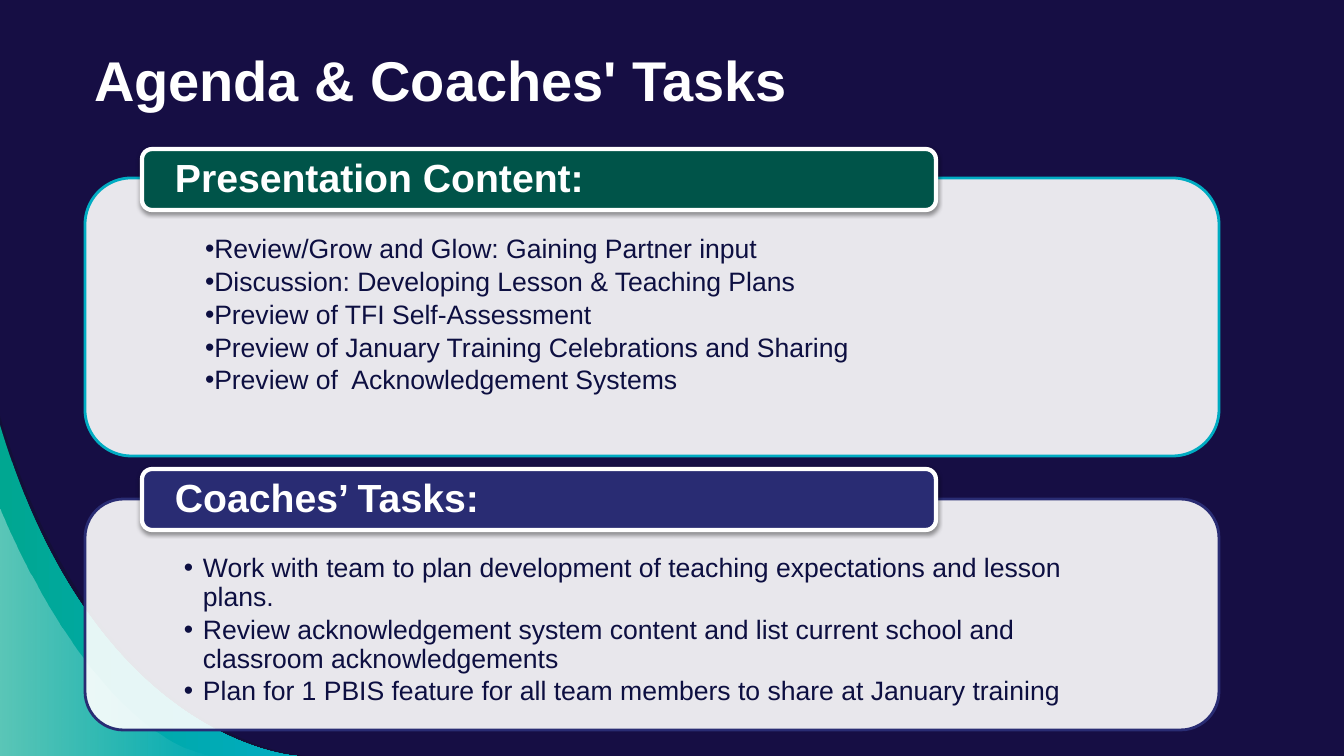
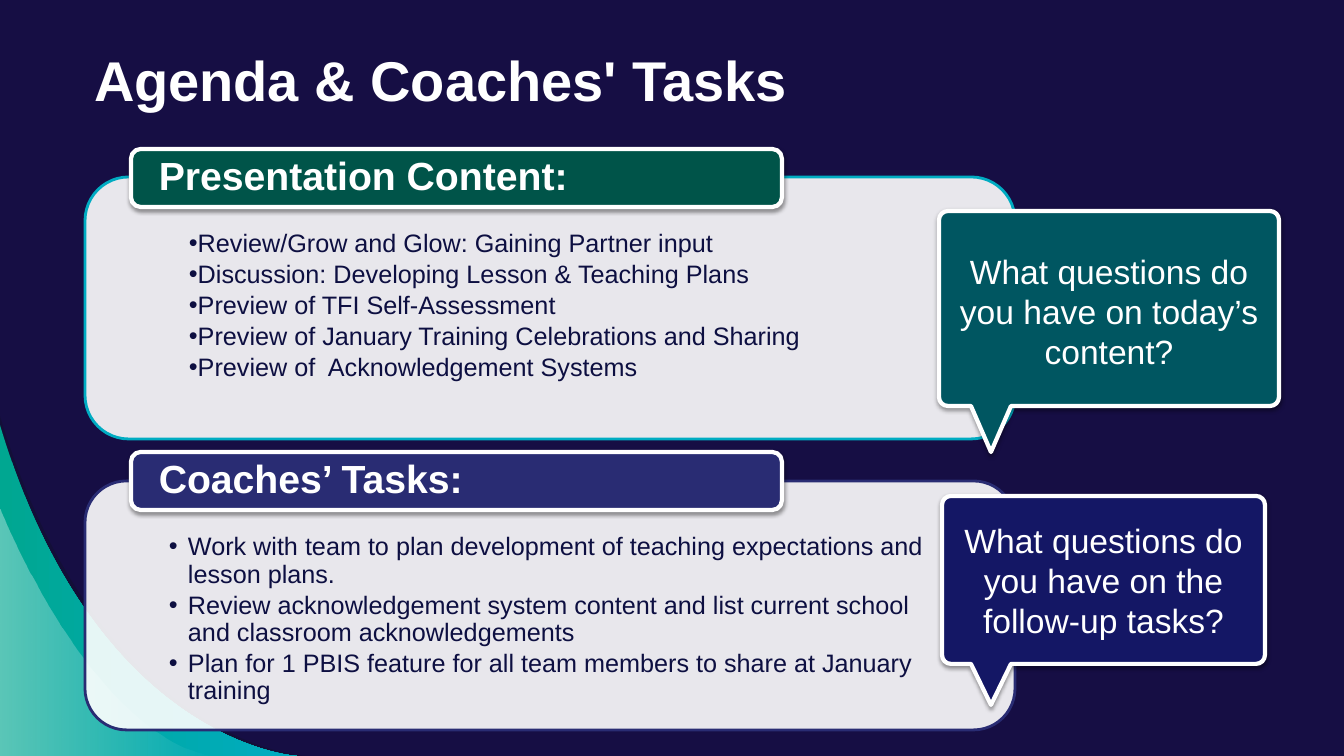
from dataclasses import dataclass

from lxml.etree import SubElement
from pptx import Presentation
from pptx.dml.color import RGBColor
from pptx.enum.shapes import MSO_SHAPE as Preset
from pptx.enum.text import MSO_ANCHOR as Anchor, MSO_AUTO_SIZE as AutoSize, PP_ALIGN as Align
from pptx.oxml.ns import qn
from pptx.util import Emu, Pt

EMU_PER_PX = 914400 / 100.8
FONT = "Arial"
TITLE = "Agenda & Coaches' Tasks"

WHITE = RGBColor(0xFF, 0xFF, 0xFF)
NIGHT = RGBColor(0x16, 0x0E, 0x44)
SHADE = RGBColor(0x12, 0x10, 0x2F)
INK = RGBColor(0x0D, 0x0F, 0x41)
AQUA = RGBColor(0x00, 0xAC, 0xC2)
JADE = RGBColor(0x00, 0xA7, 0x91)
FOREST = RGBColor(0x00, 0x54, 0x49)
INDIGO = RGBColor(0x29, 0x2C, 0x73)
PETROL = RGBColor(0x00, 0x56, 0x61)
NAVY = RGBColor(0x14, 0x17, 0x65)


@dataclass
class Section:
    heading: str
    tab_color: RGBColor
    border_color: RGBColor
    hanging: int
    items: tuple


@dataclass
class Arrangement:
    panel_width: int
    tab_left: int
    tab_width: int
    tab_height: int
    tab_inset: int
    list_insets: tuple
    list_size: int
    rows: tuple


SECTIONS = (
    Section("Presentation Content:", FOREST, AQUA, 0, (
        "Review/Grow and Glow: Gaining Partner input",
        "Discussion: Developing Lesson & Teaching Plans",
        "Preview of TFI Self-Assessment",
        "Preview of January Training Celebrations and Sharing",
        "Preview of  Acknowledgement Systems",
    )),
    Section("Coaches’ Tasks:", INDIGO, INDIGO, 19, (
        "Work with team to plan development of teaching expectations and lesson plans.",
        "Review acknowledgement system content and list current school and classroom acknowledgements",
        "Plan for 1 PBIS feature for all team members to share at January training",
    )),
)
PANEL_LEFT = 85
WIDE = Arrangement(1134, 142, 794, 61, 30, (87, 44, 87, 15), 19,
                   ((178, 278, 149), (499, 231, 469)))
NARROW = Arrangement(930, 131, 651, 58, 25, (72, 41, 72, 14), 18,
                     ((177, 262, 149), (481, 249, 452)))


def px(value):
    return Emu(round(value * EMU_PER_PX))


def place(shape, left, top, width, height):
    shape.left, shape.top, shape.width, shape.height = map(px, (left, top, width, height))


def style_font(paragraph, size, color, bold=False):
    font = paragraph.font
    font.name, font.size, font.bold = FONT, Pt(size), bold
    font.color.rgb = color


def set_frame(frame, insets, anchor):
    frame.word_wrap = True
    frame.auto_size = AutoSize.NONE
    frame.vertical_anchor = anchor
    (frame.margin_left, frame.margin_top,
     frame.margin_right, frame.margin_bottom) = map(px, insets)


def paint(shape, fill, border, border_width):
    shape.shadow.inherit = False
    shape.fill.solid()
    shape.fill.fore_color.rgb = fill
    shape.line.color.rgb = border
    shape.line.width = Pt(border_width)


def set_opacity(shape, *percents):
    colors = shape._element.spPr.iter(qn("a:srgbClr"))
    for color, percent in list(zip(colors, percents)):
        SubElement(color, qn("a:alpha"), val=str(percent * 1000))


def cast_shadow(shape):
    effects = shape._element.spPr.find(qn("a:effectLst"))
    shadow = SubElement(effects, qn("a:outerShdw"), blurRad=str(Pt(3.1)),
                        dist=str(Pt(1.6)), dir="5400000", rotWithShape="0")
    black = SubElement(shadow, qn("a:srgbClr"), val="000000")
    SubElement(black, qn("a:alpha"), val="38000")


def add_outline(slide, start, segments):
    points = [tuple(map(px, point)) for segment in segments for point in segment]
    builder = slide.shapes.build_freeform(*map(px, start))
    builder.add_line_segments(points, close=True)
    outline = builder.convert_to_shape()
    steps = list(outline._element.spPr.iter(qn("a:lnTo")))
    for segment in segments:
        first, *others = steps[:len(segment)]
        del steps[:len(segment)]
        if others:
            curve = first.makeelement(qn("a:cubicBezTo"))
            first.addprevious(curve)
            for step in (first, *others):
                curve.append(step[0])
                step.getparent().remove(step)
    return outline


def add_swoosh(slide, start, *curve):
    swoosh = add_outline(slide, start, [curve, [(0, 756)]])
    swoosh.shadow.inherit = False
    swoosh.line.fill.background()
    return swoosh


def blend(shape, left_color, right_color):
    shape.fill.gradient()
    shape.fill.gradient_angle = 0
    for stop, color in zip(shape.fill.gradient_stops, (left_color, right_color)):
        stop.color.rgb = color


def decorate_layout(layout, slide):
    shade = add_swoosh(slide, (0, 416), (99, 745), (305, 756), (305, 756))
    shade.fill.solid()
    shade.fill.fore_color.rgb = SHADE
    set_opacity(shade, 54)
    wave = add_swoosh(slide, (0, 425), (96, 745), (297, 756), (297, 756))
    blend(wave, JADE, AQUA)
    glow = add_swoosh(slide, (0, 510), (0, 510), (92, 741), (218, 756))
    blend(glow, WHITE, WHITE)
    set_opacity(glow, 36, 0)
    for order, swoosh in enumerate((shade, wave, glow)):
        swoosh._element.nvSpPr.cNvPr.set("id", str(100 + order))
        layout.shapes._spTree.insert(2 + order, swoosh._element)


def drop_footers(layout):
    for footer in list(layout.placeholders):
        if footer.placeholder_format.idx >= 10:
            layout.shapes._spTree.remove(footer._element)


def add_title(slide):
    title = slide.shapes.title
    set_frame(title.text_frame, (10, 10, 10, 10), Anchor.MIDDLE)
    title.text_frame.text = TITLE
    paragraph = title.text_frame.paragraphs[0]
    paragraph.alignment = Align.LEFT
    style_font(paragraph, 40, WHITE, bold=True)


def add_panel(slide, box, border):
    panel = slide.shapes.add_shape(Preset.ROUNDED_RECTANGLE, *map(px, box))
    paint(panel, WHITE, border, 2)
    set_opacity(panel, 90)


def add_tab(slide, box, inset, section):
    tab = slide.shapes.add_shape(Preset.ROUNDED_RECTANGLE, *map(px, box))
    paint(tab, section.tab_color, WHITE, 3)
    cast_shadow(tab)
    set_frame(tab.text_frame, (inset, 0, inset, 0), Anchor.MIDDLE)
    heading = tab.text_frame.paragraphs[0]
    heading.text = section.heading
    heading.alignment = Align.LEFT
    heading.line_spacing = 0.9
    style_font(heading, 28, WHITE, bold=True)


def fill_list(slide, body, box, insets, size, section):
    place(body, *box)
    slide.shapes._spTree.append(body._element)
    frame = body.text_frame
    set_frame(frame, insets, Anchor.TOP)
    frame.text = "\n".join(section.items)
    for item in frame.paragraphs:
        item.level = 1
        item.alignment = Align.LEFT
        item.line_spacing = 0.9
        item.space_before = Pt(0)
        item.space_after = Pt(size * 0.15)
        style_font(item, size, INK)
        properties = item._p.get_or_add_pPr()
        properties.set("marL", str(px(19)))
        properties.set("indent", str(-px(section.hanging)))
        bullet = properties.makeelement(qn("a:buChar"), {"char": "•"})
        properties.find(qn("a:spcAft")).addnext(bullet)


def add_sections(slide, plan):
    bodies = [slide.placeholders[index] for index in (1, 2)]
    for section, body, (top, height, tab_top) in zip(SECTIONS, bodies, plan.rows):
        add_panel(slide, (PANEL_LEFT, top, plan.panel_width, height), section.border_color)
        add_tab(slide, (plan.tab_left, tab_top, plan.tab_width, plan.tab_height),
                plan.tab_inset, section)
        gap = round(height * 0.05)
        list_box = (PANEL_LEFT + gap, top + gap, plan.panel_width - 2 * gap, height - 2 * gap)
        fill_list(slide, body, list_box, plan.list_insets, plan.list_size, section)


def add_callout(slide, text, color, left, top, right, bottom, tip):
    radius, pull = 9, 4
    tip_x = tip[0]
    segments = (
        [(right - radius, top)],
        [(right - pull, top), (right, top + pull), (right, top + radius)],
        [(right, bottom - radius)],
        [(right, bottom - pull), (right - pull, bottom), (right - radius, bottom)],
        [(tip_x + 20, bottom)],
        [tip],
        [(tip_x - 20, bottom)],
        [(left + radius, bottom)],
        [(left + pull, bottom), (left, bottom - pull), (left, bottom - radius)],
        [(left, top + radius)],
        [(left, top + pull), (left + pull, top), (left + radius, top)],
    )
    callout = add_outline(slide, (left + radius, top), segments)
    paint(callout, color, WHITE, 3)
    cast_shadow(callout)
    set_frame(callout.text_frame, (13, 13, 13, 54), Anchor.MIDDLE)
    question = callout.text_frame.paragraphs[0]
    question.text = text
    question.alignment = Align.CENTER
    style_font(question, 24, WHITE)


def main():
    deck = Presentation()
    deck.slide_width, deck.slide_height = px(1344), px(756)
    background = deck.slide_master.background.fill
    background.solid()
    background.fore_color.rgb = NIGHT
    layout = deck.slide_layouts[3]
    place(layout.placeholders[0], 84, 33, 1034, 93)
    drop_footers(layout)

    agenda, questions = [deck.slides.add_slide(layout) for _ in range(2)]
    decorate_layout(layout, agenda)
    for slide, plan in ((agenda, WIDE), (questions, NARROW)):
        add_title(slide)
        add_sections(slide, plan)

    add_callout(questions, "What questions do you have on today’s content?", PETROL,
                939, 211, 1279, 406, (991, 452))
    add_callout(questions, "What questions do you have on the follow-up tasks?", NAVY,
                942, 496, 1265, 664, (991, 705))
    deck.save("out.pptx")


if __name__ == "__main__":
    main()
